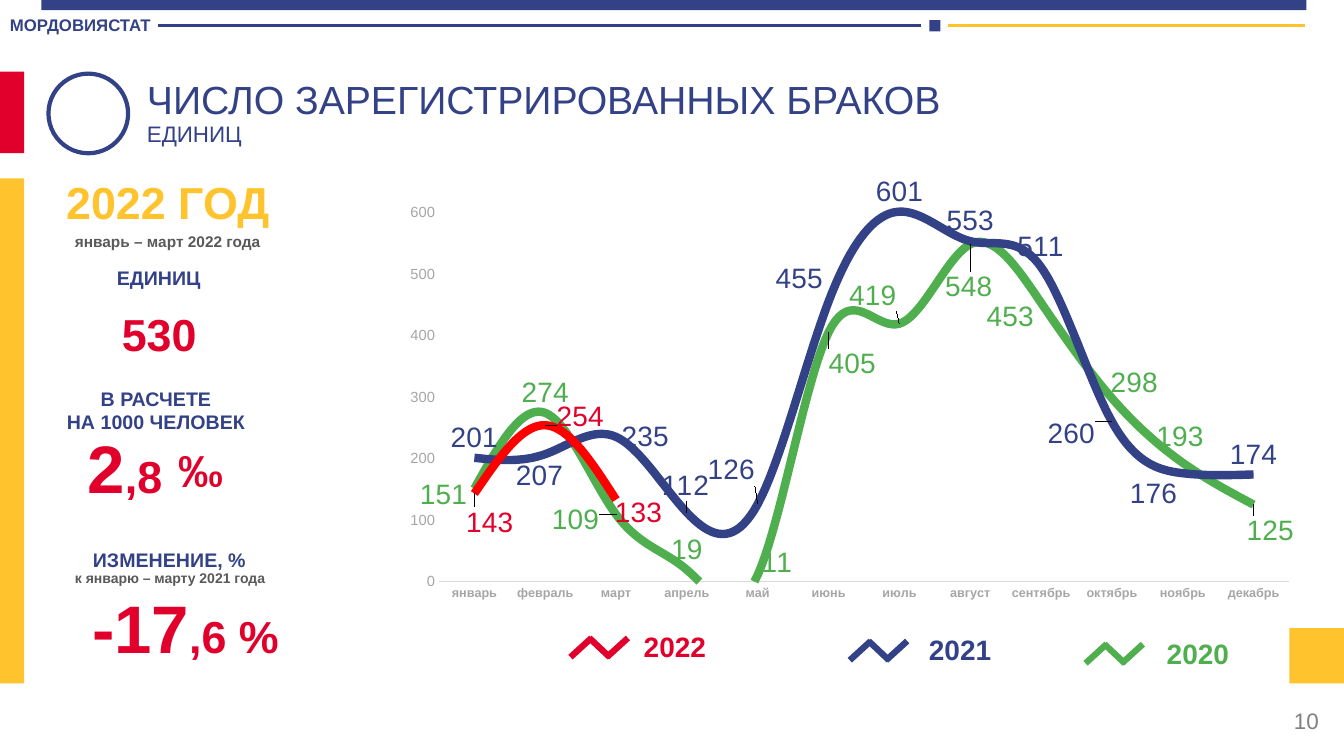
import pptx
import pptx.chart.data
import pptx.dml.color
import pptx.enum.chart
import pptx.enum.shapes
import pptx.enum.text
import pptx.oxml
import pptx.oxml.ns
import pptx.util

Pt = pptx.util.Pt
SHAPE = pptx.enum.shapes.MSO_SHAPE
ANCHOR = pptx.enum.text.MSO_ANCHOR
ALIGN = pptx.enum.text.PP_ALIGN
FONT = "Arial"
BLUE, RED, YELLOW, GREEN = "334286", "E1002B", "FFC32E", "4FAF4F"
DARK = "595959"

CHART_BOX = (257, 118.8, 690, 319)
MONTHS = ["январь", "февраль", "март", "апрель", "май", "июнь", "июль",
          "август", "сентябрь", "октябрь", "ноябрь", "декабрь"]
# Name, line colour, label colour, values, label shifts in points by month index
SERIES = [
    ("2020", GREEN, GREEN,
     [151, 274, 109, 19, 11, 405, 419, 548, 453, 298, 193, 125],
     {0: (-22, 19), 2: (-29, 18), 4: (14, 6), 5: (17, 37), 6: (-19, -6), 7: (-1, 45),
      8: (-22, 24), 9: (16, 3), 10: (-2, -4), 11: (12, 33)}),
    ("2021", BLUE, BLUE,
     [201, 207, 235, 112, 126, 455, 601, 553, 511, 260, 176, 174],
     {1: (-4, 30), 2: (21, 14), 3: (-1, -5), 4: (-19, -10), 5: (-21, -2),
      9: (-29, 23), 10: (-21, 29)}),
    ("2022", "FF0000", "E3002A",
     [143, 254, 133] + [None] * 9,
     {0: (11, 35), 1: (25, 8), 2: (16, 24)}),
]
# Name, colour, left and bottom of the zigzag, left of the caption
LEGEND = [("2022", RED, 407.5, 469.4, 448.6),
          ("2021", BLUE, 607, 471.6, 652.3),
          ("2020", GREEN, 775.4, 473.8, 822.2)]


def rgb(color):
    return pptx.dml.color.RGBColor.from_string(color)


def set_font(font, size, color, bold=False):
    font.name, font.size, font.bold = FONT, Pt(size), bold
    font.color.rgb = rgb(color)


def add_block(s, shape, box, fill=None, line=None, width=0):
    sp = s.shapes.add_shape(shape, *map(Pt, box))
    sp.shadow.inherit = False
    if fill:
        sp.fill.solid()
        sp.fill.fore_color.rgb = rgb(fill)
    else:
        sp.fill.background()
    if line:
        sp.line.color.rgb = rgb(line)
        sp.line.width = Pt(width)
    else:
        sp.line.fill.background()


def add_line(s, x1, y1, x2, y2, color, width):
    cn = s.shapes.add_connector(pptx.enum.shapes.MSO_CONNECTOR.STRAIGHT,
                                Pt(x1), Pt(y1), Pt(x2), Pt(y2))
    cn.line.color.rgb = rgb(color)
    cn.line.width = Pt(width)
    pptx.oxml.ns.qn("a:effectLst")
    effects = pptx.oxml.parse_xml(
        f'<a:effectLst {pptx.oxml.ns.nsdecls("a")}/>')
    cn.element.spPr.append(effects)


def add_text(s, box, *paragraphs, color=BLUE, bold=True, align=ALIGN.LEFT,
             anchor=ANCHOR.TOP, before=0, spacing=None, wrap=True):
    """Each paragraph is a list of (text, size) runs."""
    tf = s.shapes.add_textbox(*map(Pt, box)).text_frame
    tf.word_wrap = wrap
    tf.vertical_anchor = anchor
    for i, runs in enumerate(paragraphs):
        p = tf.add_paragraph() if i else tf.paragraphs[0]
        p.alignment, p.space_before = align, Pt(before)
        if spacing:
            p.line_spacing = spacing[i]
        for text, size in runs:
            r = p.add_run()
            r.text = text
            set_font(r.font, size, color, bold)


def shift_label(label, dx, dy):
    """Move a data label by points from its place above the marker."""
    layout = pptx.oxml.parse_xml(
        f'<c:layout {pptx.oxml.ns.nsdecls("c")}><c:manualLayout>'
        f'<c:x val="{dx / CHART_BOX[2]:.4f}"/><c:y val="{dy / CHART_BOX[3]:.4f}"/>'
        '</c:manualLayout></c:layout>')
    label.font._element.getparent().getparent().getparent().getparent() \
        .find(pptx.oxml.ns.qn("c:idx")).addnext(layout)


def style_axes(chart):
    cat, val = chart.category_axis, chart.value_axis
    for axis in (cat, val):
        axis.major_tick_mark = pptx.enum.chart.XL_TICK_MARK.NONE
        axis.has_major_gridlines = False
    set_font(cat.tick_labels.font, 9, "A6A6A6", True)
    cat.format.line.color.rgb = rgb("D9D9D9")
    cat.format.line.width = Pt(0.75)
    set_font(val.tick_labels.font, 10.5, "A6A6A6")
    val.format.line.fill.background()
    val.minimum_scale, val.maximum_scale, val.major_unit = 0, 650, 100


def add_marriage_chart(s):
    data = pptx.chart.data.CategoryChartData(number_format="0")
    data.categories = MONTHS
    for name, _, _, values, _ in SERIES:
        data.add_series(name, values)
    chart = s.shapes.add_chart(pptx.enum.chart.XL_CHART_TYPE.LINE,
                               *map(Pt, CHART_BOX), data).chart
    set_font(chart.font, 10, "000000")
    chart.has_legend = chart.has_title = False
    style_axes(chart)
    plot = chart.plots[0]
    plot.vary_by_categories = False
    above = pptx.enum.chart.XL_LABEL_POSITION.ABOVE
    for series, (_, color, label_color, _, shifts) in zip(plot.series, SERIES):
        series.smooth = True
        series.marker.style = pptx.enum.chart.XL_MARKER_STYLE.NONE
        series.format.line.color.rgb = rgb(color)
        series.format.line.width = Pt(6)
        labels = series.data_labels
        labels.show_value, labels.position = True, above
        set_font(labels.font, 20, label_color)
        for i, (dx, dy) in shifts.items():
            label = series.points[i].data_label
            set_font(label.font, 20, label_color)
            label.position = above
            shift_label(label, dx, dy)
    # Fixed plot area
    area = chart.element.find(".//" + pptx.oxml.ns.qn("c:plotArea"))
    for old in area.findall(pptx.oxml.ns.qn("c:layout")):
        area.remove(old)
    sizes = "".join(f'<c:{k} val="{v}"/>' for k, v in
                    zip("xywh", (0.082, 0.034, 0.88, 0.896)))
    area.insert(0, pptx.oxml.parse_xml(
        f'<c:layout {pptx.oxml.ns.nsdecls("c")}><c:manualLayout>'
        '<c:layoutTarget val="inner"/><c:xMode val="edge"/><c:yMode val="edge"/>'
        f'{sizes}</c:manualLayout></c:layout>'))


def add_legend_item(s, name, color, x, y, text_x):
    for start, end in ((0, 15), (26, 41), (28, 13.5)):
        add_line(s, x + start, y, x + end, y - 13.7, color, 4.5)
    add_text(s, (text_x, y - 23, 67, 31.7), [(name, 20)], color=color,
             align=ALIGN.CENTER, before=10)


def main():
    prs = pptx.Presentation()
    prs.slide_width, prs.slide_height = Pt(960), Pt(540)
    s = prs.slides.add_slide(prs.slide_layouts[6])
    mid, center = ANCHOR.MIDDLE, ALIGN.CENTER

    # Header and side blocks
    for box, color in (((29.5, 0, 903.6, 7.2), BLUE), ((0, 51.1, 17.3, 58.3), RED),
                       ((0, 127.4, 17.3, 360.7), YELLOW), ((921, 448.6, 39, 39.6), YELLOW),
                       ((663.8, 14.4, 8, 8), BLUE)):
        add_block(s, SHAPE.RECTANGLE, box, color)
    add_line(s, 113, 18, 658, 18, BLUE, 2)
    add_line(s, 677, 18, 932.4, 18, YELLOW, 2)
    add_text(s, (0, 7.2, 163.4, 21.6), [("МОРДОВИЯСТАТ", 12)])

    # Title
    add_block(s, SHAPE.OVAL, (34.6, 52.6, 56.9, 56.9), line=BLUE, width=3)
    add_text(s, (97.9, 53.3, 750, 54), [("ЧИСЛО ЗАРЕГИСТРИРОВАННЫХ БРАКОВ", 28)],
             [("ЕДИНИЦ", 16)], bold=False, anchor=mid, before=10, spacing=(0.9, 0.3))

    # Chart and legend
    add_marriage_chart(s)
    for item in LEGEND:
        add_legend_item(s, *item)

    # Key figures
    add_text(s, (16.6, 128.9, 206.6, 29.5), [("2022 ГОД", 32)], color=YELLOW,
             align=center, anchor=mid, before=10)
    add_text(s, (43.8, 162, 152, 20.9), [("январь – март 2022 года", 11)],
             color=DARK, align=center, wrap=False)
    add_text(s, (22.3, 186.5, 182.2, 24.5), [("ЕДИНИЦ", 14)], align=center, before=10)
    add_text(s, (79.9, 216.7, 79.9, 42.5), [("530", 32)], color=RED, anchor=mid, before=10)
    add_text(s, (12.4, 283.7, 198, 18.7), [("В РАСЧЕТЕ", 14)], [("НА 1000 ЧЕЛОВЕК", 14)],
             align=center, anchor=mid)
    add_text(s, (55.4, 311.8, 121.7, 42.5), [("2", 48), (",8", 32)],
             color=RED, anchor=mid, before=10)
    add_text(s, (120.2, 312.5, 38.2, 46), [("‰", 32)], color=RED, before=10)
    add_text(s, (42.5, 392.4, 157, 20.9), [("ИЗМЕНЕНИЕ, %", 14)], align=center,
             anchor=mid, before=10, spacing=(0.5,))
    add_text(s, (45.4, 403.2, 152, 19.4), [("к январю – марту 2021 года", 10)],
             color=DARK, align=center, wrap=False)
    add_text(s, (58.7, 426.2, 181, 42.5), [("-17", 48), (",6 %", 32)],
             color=RED, anchor=mid, before=10)

    # Slide number
    add_text(s, (733, 500.4, 216, 28.8), [("10", 16)], color="808080", bold=False,
             align=ALIGN.RIGHT, anchor=mid)
    prs.save("out.pptx")


if __name__ == "__main__":
    main()
